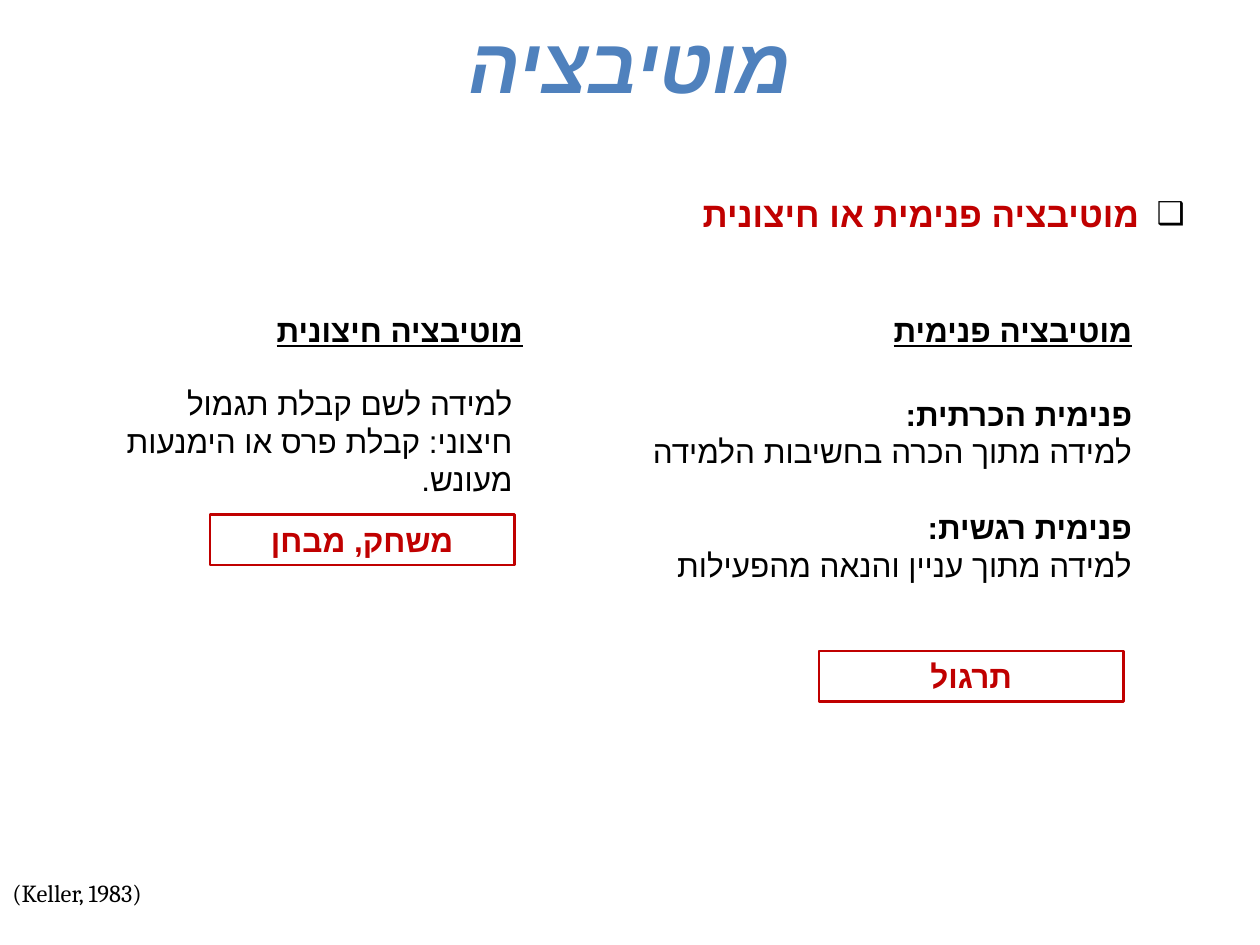
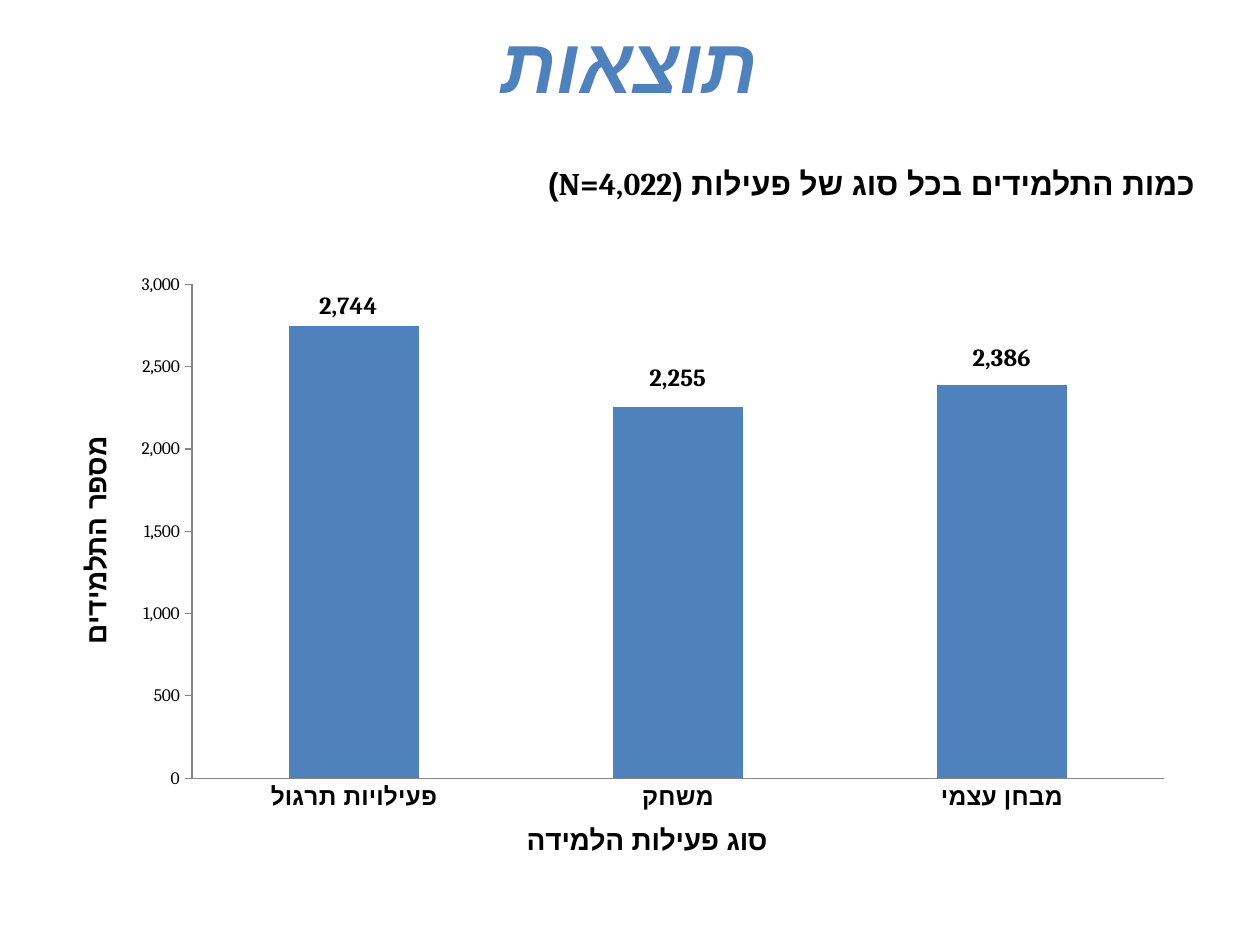
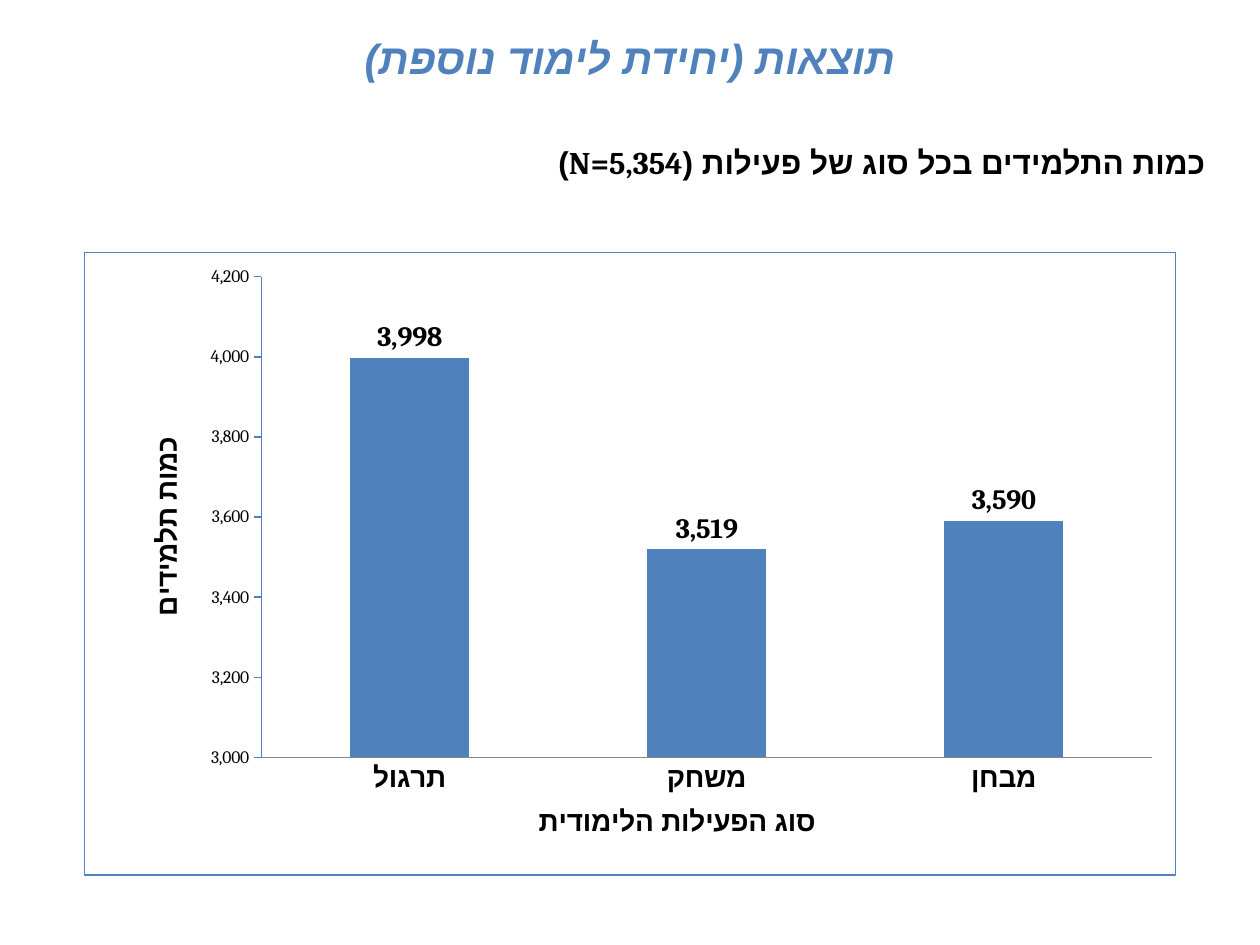
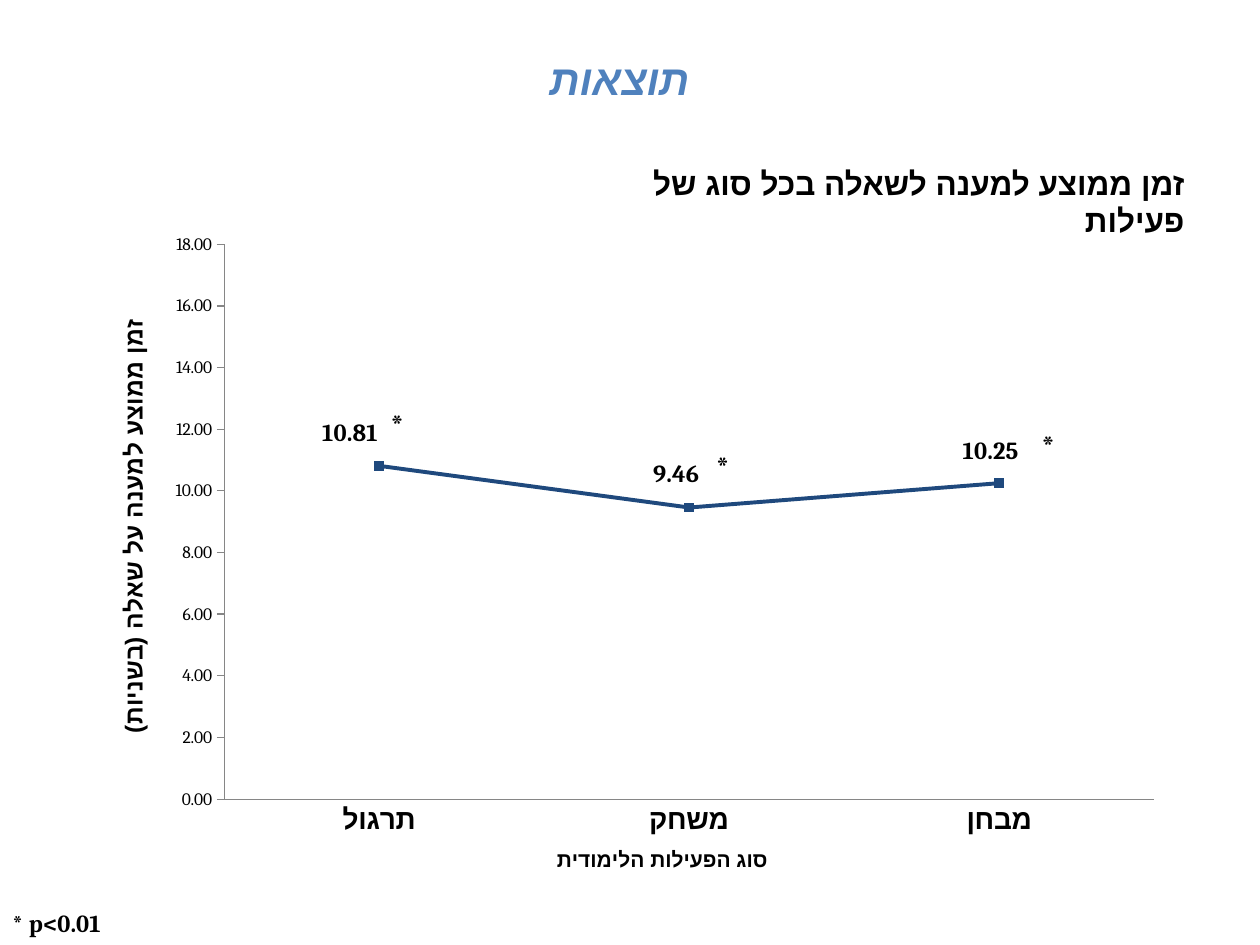
from collections import namedtuple
from dataclasses import dataclass

from lxml import etree
from pptx import Presentation
from pptx import util as u
from pptx.chart.data import CategoryChartData
from pptx.dml.color import RGBColor
from pptx.enum import chart as charts
from pptx.enum import shapes, text
from pptx.oxml.ns import qn


@dataclass(frozen=True)
class Theme:
    """Colours, fonts and type sizes of the deck."""
    blue: str = "4F81BD"
    navy: str = "1F497D"
    red: str = "C00000"
    black: str = "000000"
    axis: str = "868686"
    body: str = "Cambria"
    heading: str = "Calibri"
    plain: str = "Arial"
    big_title: int = 44
    small_title: int = 24
    lead: int = 20
    text: int = 18
    note: int = 14
    scale: int = 10


THEME = Theme()
CELLS_PER_INCH = 12
COLUMNS, ROWS = 120, 90
RIGHT, CENTER, LEFT = text.PP_ALIGN.RIGHT, text.PP_ALIGN.CENTER, text.PP_ALIGN.LEFT
CHART15 = "http://schemas.microsoft.com/office/drawing/2012/chart"
LEADER_EXTENSION = "{CE6537A1-D6FC-4f65-9D91-7224C49458BB}"
AxisTitle = namedtuple("AxisTitle", "words size left top")


def cells(*counts):
    """Turn grid cells into lengths."""
    return [u.Inches(count / CELLS_PER_INCH) for count in counts]


def style(font, size, color=THEME.black, name=THEME.body, bold=False, italic=False):
    """Format one font."""
    font.size, font.name, font.bold, font.italic = u.Pt(size), name, bold, italic
    font.color.rgb = RGBColor.from_string(color)


def set_script_font(properties):
    """Set the typeface of Hebrew letters."""
    etree.SubElement(properties, qn("a:cs")).set("typeface", THEME.plain)


def format_para(para, align, rtl, size, name=THEME.body, underline=None, **look):
    """Align a paragraph and format its runs."""
    para.alignment = align
    if rtl:
        para._p.get_or_add_pPr().set("rtl", "1")
    for span in para.runs:
        style(span.font, size, name=name, **look)
        span.font.underline = underline
        set_script_font(span._r.get_or_add_rPr())


def add_page(deck, title, box, size):
    """Add a page with its title."""
    page = deck.slides.add_slide(deck.slide_layouts[5])
    heading = page.shapes.title
    heading.left, heading.top, heading.width, heading.height = cells(*box)
    frame = heading.text_frame
    frame.text = title
    frame.vertical_anchor = text.MSO_ANCHOR.MIDDLE
    format_para(frame.paragraphs[0], CENTER, True, size, THEME.heading,
                color=THEME.blue, bold=True, italic=True)
    return page


def add_text(page, box, words, size=THEME.text, align=RIGHT, rtl=True, **look):
    """Add a text box with one paragraph."""
    frame = page.shapes.add_textbox(*cells(*box)).text_frame
    frame.word_wrap = True
    frame.text = words
    format_para(frame.paragraphs[0], align, rtl, size, **look)
    return frame


def add_bullet(page, box, words):
    """Add a red statement with a square bullet."""
    frame = add_text(page, box, words, THEME.lead, color=THEME.red, bold=True)
    frame.vertical_anchor = text.MSO_ANCHOR.BOTTOM
    properties = frame.paragraphs[0]._p.get_or_add_pPr()
    indent = u.Inches(0.36)
    properties.set("marL", str(indent))
    properties.set("indent", str(-indent))
    color = etree.SubElement(properties, qn("a:buClr"))
    etree.SubElement(color, qn("a:srgbClr")).set("val", THEME.black)
    etree.SubElement(properties, qn("a:buSzPct")).set("val", "90000")
    etree.SubElement(properties, qn("a:buFont")).set("typeface", THEME.plain)
    etree.SubElement(properties, qn("a:buChar")).set("char", "❑")


def add_terms(page, box, terms):
    """Add bold terms, each above its explanation."""
    (term, meaning), *others = terms
    frame = add_text(page, box, term, bold=True)
    lines = [(meaning, False)]
    for term, meaning in others:
        lines += [(term, True), (meaning, False)]
    for words, bold in lines:
        para = frame.add_paragraph()
        para.text = words
        format_para(para, RIGHT, True, THEME.text, bold=bold)
        if bold:
            para.space_before = u.Pt(21.5)


def add_example(page, left, top, words):
    """Add a red outlined box with an example."""
    box = page.shapes.add_shape(shapes.MSO_SHAPE.RECTANGLE, *cells(left, top, 29, 4.8))
    box.shadow.inherit = False
    box.fill.background()
    box.line.color.rgb = RGBColor.from_string(THEME.red)
    box.line.width = u.Pt(1.5)
    box.text_frame.text = words
    format_para(box.text_frame.paragraphs[0], CENTER, False, THEME.text,
                color=THEME.red, bold=True)


def place(element, position, left, top, size=None):
    """Fix the layout of a chart part in percent of the chart."""
    layout = element.find(qn("c:layout"))
    if layout is None:
        layout = etree.Element(qn("c:layout"))
        element.insert(position, layout)
    manual = etree.SubElement(layout, qn("c:manualLayout"))
    modes = {"xMode": "edge", "yMode": "edge"}
    shares = {"x": left, "y": top}
    if size:
        modes = {"layoutTarget": "inner", **modes}
        shares.update(w=size[0], h=size[1])
    elif element.tag == qn("c:dLbl"):
        modes = {}
    values = {**modes, **{tag: share / 100 for tag, share in shares.items()}}
    for tag, value in values.items():
        etree.SubElement(manual, qn(f"c:{tag}")).set("val", str(value))


def format_axis(axis, title, color, tick, name):
    """Format an axis line and its title."""
    axis.has_major_gridlines = False
    axis.major_tick_mark, axis.minor_tick_mark = tick, charts.XL_TICK_MARK.NONE
    axis.format.line.color.rgb = RGBColor.from_string(color)
    axis.format.line.width = u.Pt(0.75)
    frame = axis.axis_title.text_frame
    frame.text = title.words
    style(frame.paragraphs[0].runs[0].font, title.size, name=name, bold=True)
    place(axis.axis_title.element, 1, title.left, title.top)


def format_value_axis(axis, limits, number_format):
    """Set the scale and turn the title upright."""
    axis.minimum_scale, axis.maximum_scale, axis.major_unit = limits
    axis.tick_labels.number_format = number_format
    axis.tick_labels.number_format_is_linked = False
    style(axis.tick_labels.font, THEME.scale)
    body = next(axis.axis_title.element.iter(qn("a:bodyPr")))
    body.set("rot", "-5400000")
    body.set("vert", "horz")


def add_chart(page, box, kind, data, limits, plot_area, category_title, value_title,
              label_size, category_size, number_format="#,##0", axis_color=THEME.axis,
              name=THEME.body):
    """Add a chart with one series and labelled values."""
    content = CategoryChartData(number_format=number_format)
    content.categories = list(data)
    content.add_series("Series 1", list(data.values()))
    chart = page.shapes.add_chart(kind, *cells(*box), content).chart
    chart.has_legend = chart.has_title = False
    style(chart.font, THEME.scale)
    ticks = charts.XL_TICK_MARK
    format_axis(chart.category_axis, category_title, THEME.axis, ticks.NONE, name)
    style(chart.category_axis.tick_labels.font, category_size, name=name, bold=True)
    format_axis(chart.value_axis, value_title, axis_color, ticks.OUTSIDE, name)
    format_value_axis(chart.value_axis, limits, number_format)
    left, top, *size = plot_area
    place(next(chart.element.iter(qn("c:plotArea"))), 0, left, top, size)
    plot = chart.plots[0]
    plot.vary_by_categories = False
    plot.has_data_labels = True
    labels = plot.data_labels
    labels.show_value = True
    labels.number_format, labels.number_format_is_linked = number_format, False
    style(labels.font, label_size, bold=True)
    return chart


def nudge_labels(chart, nudges, position):
    """Shift the value labels and hide their leader lines."""
    series = chart.plots[0].series[0]
    for index in range(len(nudges)):
        label = series.points[index].data_label
        style(label.font, THEME.note, bold=True)
        label.position = position
    marks = list(chart.element.iter(qn("c:dLbl")))
    for mark, nudge in zip(marks, nudges):
        place(mark, 1, *nudge)
    group = marks[0].getparent()
    for leader in group.findall(qn("c:showLeaderLines")):
        leader.set("val", "0")
    extensions = etree.SubElement(group, qn("c:extLst"))
    extension = etree.SubElement(extensions, qn("c:ext"), uri=LEADER_EXTENSION)
    etree.SubElement(extension, f"{{{CHART15}}}showLeaderLines",
                     nsmap={"c15": CHART15}).set("val", "0")


def add_columns(page, box, data, *details, nudges=(), **options):
    """Add a chart of blue columns."""
    chart = add_chart(page, box, charts.XL_CHART_TYPE.COLUMN_CLUSTERED, data,
                      *details, **options)
    plot = chart.plots[0]
    plot.gap_width = 150
    plot.data_labels.position = charts.XL_LABEL_POSITION.OUTSIDE_END
    fill = plot.series[0].format.fill
    fill.solid()
    fill.fore_color.rgb = RGBColor.from_string(THEME.blue)
    if nudges:
        nudge_labels(chart, nudges, charts.XL_LABEL_POSITION.OUTSIDE_END)
    finish_scripts(chart)
    return chart


def add_line(page, box, data, *details, nudges, **options):
    """Add a navy line chart with shifted labels."""
    chart = add_chart(page, box, charts.XL_CHART_TYPE.LINE_MARKERS, data,
                      *details, **options)
    series = chart.plots[0].series[0]
    navy = RGBColor.from_string(THEME.navy)
    series.smooth = False
    series.format.line.color.rgb = navy
    series.format.line.width = u.Pt(2.25)
    series.marker.style, series.marker.size = charts.XL_MARKER_STYLE.SQUARE, 5
    series.marker.format.fill.solid()
    series.marker.format.fill.fore_color.rgb = navy
    series.marker.format.line.color.rgb = navy
    nudge_labels(chart, nudges, charts.XL_LABEL_POSITION.ABOVE)
    finish_scripts(chart)


def finish_scripts(chart):
    """Give every chart text the same Hebrew typeface."""
    for properties in list(chart.element.iter(qn("a:defRPr"), qn("a:rPr"))):
        if properties.find(qn("a:latin")) is not None:
            set_script_font(properties)


def add_border(chart, color):
    """Draw a thin frame around a chart."""
    look = etree.Element(qn("c:spPr"))
    line = etree.SubElement(look, qn("a:ln"), w=str(u.Pt(0.75)))
    fill = etree.SubElement(line, qn("a:solidFill"))
    etree.SubElement(fill, qn("a:srgbClr")).set("val", color)
    chart.element.find(qn("c:chart")).addnext(look)


def build_motivation(deck):
    """Build the page on kinds of motivation."""
    page = add_page(deck, "מוטיבציה", (6, 0, 108, 12), THEME.big_title)
    add_bullet(page, (4, 14, 110, 8.9), "מוטיבציה פנימית או חיצונית")
    add_terms(page, (57, 37, 52, 19.4), [
        ("פנימית הכרתית:", "למידה מתוך הכרה בחשיבות הלמידה"),
        ("פנימית רגשית:", "למידה מתוך עניין והנאה מהפעילות")])
    add_text(page, (9, 36, 41, 12.1),
             "למידה לשם קבלת תגמול חיצוני: קבלת פרס או הימנעות מעונש.")
    add_example(page, 78, 62, "תרגול")
    add_example(page, 20, 49, "משחק, מבחן")
    for left, words in ((82, "מוטיבציה פנימית"), (24, "מוטיבציה חיצונית")):
        add_text(page, (left, 29, 27, 4.8), words, bold=True, underline=True)
    add_text(page, (0, 83, 54, 4.1), "(Keller, 1983)", THEME.note, LEFT, False)


def build_counts(deck):
    """Build the page on learners per activity."""
    page = add_page(deck, "תוצאות", (6, 0, 108, 12), THEME.big_title)
    add_columns(page, (5, 25, 108, 59.4),
                {"פעילויות תרגול": 2744, "משחק": 2255, "מבחן עצמי": 2386},
                (0, 3000, 500), (12.3, 3.5, 85.7, 79.2),
                AxisTitle("סוג פעילות הלמידה", 16, 41.4, 89),
                AxisTitle("מספר התלמידים", 16, 1.8, 27.1), 14, 14,
                nudges=((-0.5, 0), (0, -1.4), (0, -1.2)))
    add_text(page, (27, 15, 88, 8.5), "כמות התלמידים בכל סוג של פעילות (N=4,022)",
             bold=True)


def build_second_unit(deck):
    """Build the page on the additional unit."""
    page = add_page(deck, "תוצאות (יחידת לימוד נוספת)", (6, 0, 108, 11),
                    THEME.small_title)
    chart = add_columns(page, (8, 24, 104, 59.4),
                        {"תרגול": 3998, "משחק": 3519, "מבחן": 3590},
                        (3000, 4200, 200), (16.2, 3.9, 81.7, 77.2),
                        AxisTitle("סוג הפעילות הלימודית", 16, 41.2, 87.7),
                        AxisTitle("כמות תלמידים", 16, 5.4, 28.8), 16, 16,
                        axis_color=THEME.blue)
    add_border(chart, THEME.blue)
    add_text(page, (38, 13, 78, 4.8), "כמות התלמידים בכל סוג של פעילות (N=5,354)",
             bold=True)


def build_times(deck):
    """Build the page on answering times."""
    page = add_page(deck, "תוצאות", (5, 0, 108, 15), THEME.small_title)
    add_line(page, (9, 21, 103, 64.7),
             {"תרגול": 10.81, "משחק": 9.46, "מבחן": 10.25},
             (0, 18, 2), (12, 3.5, 86, 81.7),
             AxisTitle("סוג הפעילות הלימודית", 12, 42.4, 91.6),
             AxisTitle("זמן ממוצע למענה על שאלה (בשניות)", 14, 1.7, 14), 14, 16,
             number_format="0.00", name=THEME.plain,
             nudges=((-2.7, -1.3), (-1.2, -1.4), (-0.8, -1.1)))
    add_text(page, (0, 85.9, 45, 4.1), "* p<0.01", THEME.note, LEFT, False, bold=True)
    for left, top in ((36, 38), (67, 42), (98, 40)):
        add_text(page, (left, top, 3, 4.8), "*", align=LEFT, rtl=False)
    add_text(page, (52, 15, 62, 4.8), "זמן ממוצע למענה לשאלה בכל סוג של פעילות",
             bold=True)


def main():
    """Build and save the deck."""
    deck = Presentation()
    deck.slide_width, deck.slide_height = cells(COLUMNS, ROWS)
    for build in (build_motivation, build_counts, build_second_unit, build_times):
        build(deck)
    deck.save("out.pptx")


if __name__ == "__main__":
    main()
